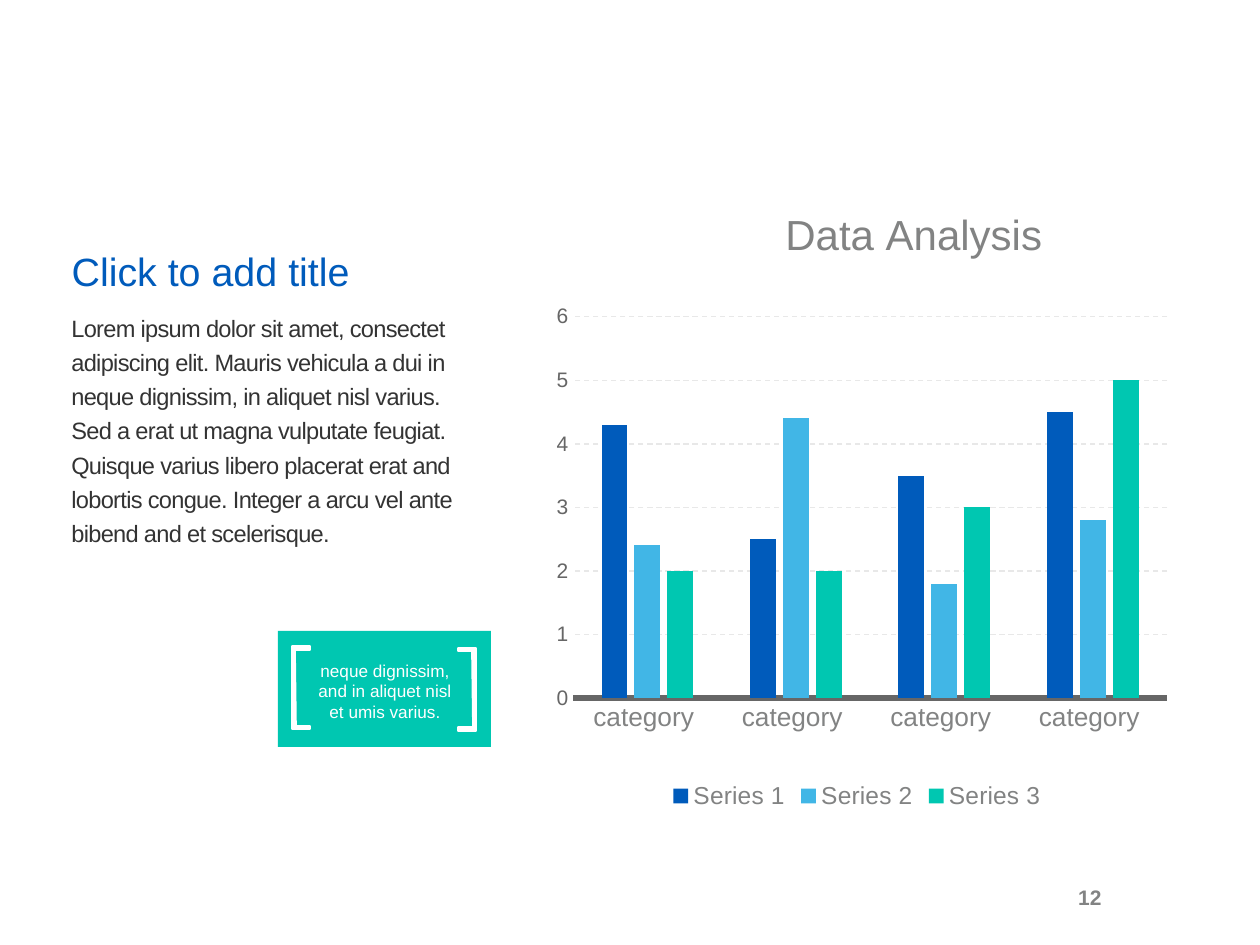
from lxml import etree
from pptx import Presentation
from pptx.chart.data import CategoryChartData
from pptx.dml.color import RGBColor
from pptx.enum.chart import XL_CHART_TYPE, XL_LEGEND_POSITION, XL_TICK_MARK
from pptx.enum.dml import MSO_LINE
from pptx.enum.shapes import MSO_SHAPE
from pptx.enum.text import MSO_ANCHOR, PP_ALIGN
from pptx.oxml.ns import qn
from pptx.util import Emu, Pt

PX = 914400 // 126
FONT = "Arial"
BLUE, SKY, TEAL = "005BBB", "41B6E6", "00C7B1"
GREY, DARK_GREY, PALE_GREY = "828383", "666666", "E8E8E8"
INK, WHITE = "333333", "FFFFFF"
COLUMNS = XL_CHART_TYPE.COLUMN_CLUSTERED
LEGEND_BOTTOM = XL_LEGEND_POSITION.BOTTOM
NO_TICK = XL_TICK_MARK.NONE
DASH = MSO_LINE.DASH
RECTANGLE = MSO_SHAPE.RECTANGLE
LEFT, CENTER, RIGHT = PP_ALIGN.LEFT, PP_ALIGN.CENTER, PP_ALIGN.RIGHT
TOP, MIDDLE, BOTTOM = MSO_ANCHOR.TOP, MSO_ANCHOR.MIDDLE, MSO_ANCHOR.BOTTOM

BODY = (
    "Lorem ipsum dolor sit amet, consectet adipiscing elit. Mauris vehicula "
    "a dui in neque dignissim, in aliquet nisl varius. Sed a erat ut magna "
    "vulputate feugiat. Quisque varius libero placerat erat and lobortis "
    "congue. Integer a arcu vel ante bibend and et scelerisque."
)
CATEGORIES = ["category "] * 4
SERIES = [
    ("Series 1", (4.3, 2.5, 3.5, 4.5), BLUE),
    ("Series 2", (2.4, 4.4, 1.8, 2.8), SKY),
    ("Series 3", (2, 2, 3, 5), TEAL),
]
LEFT_BRACKET = [(310, 646), (292, 646), (292, 729), (310, 729),
                (310, 726), (296, 726), (295, 650), (310, 650)]
# Half turn about the centre of the callout
RIGHT_BRACKET = [(768 - x, 1377 - y) for x, y in LEFT_BRACKET]


def rgb(color):
    return RGBColor.from_string(color)


def box(*lengths):
    return [Emu(length * PX) for length in lengths]


def style_font(font, size, color, bold=False):
    font.name = FONT
    font.size = Pt(size)
    font.bold = bold
    font.color.rgb = rgb(color)


def write(shape, text, size, color, align=LEFT, anchor=TOP, bold=False):
    """Fill a shape with one paragraph and return that paragraph."""
    frame = shape.text_frame
    frame.word_wrap = True
    frame.vertical_anchor = anchor
    frame.text = text
    paragraph = frame.paragraphs[0]
    paragraph.alignment = align
    for run in paragraph.runs:
        style_font(run.font, size, color, bold)
    return paragraph


def add_title(slide):
    title = slide.shapes.title
    title.left, title.top, title.width, title.height = box(59, 181, 469, 120)
    paragraph = write(title, "Click to add title", 22.5, BLUE, anchor=BOTTOM)
    paragraph.line_spacing = 0.9


def add_body(slide):
    body = slide.shapes.add_textbox(*box(59, 302, 413, 382))
    paragraph = write(body, BODY, 13.5, INK)
    paragraph.line_spacing = Pt(19.5)
    for run in paragraph.runs:
        run.font._element.set("spc", "-38")


def add_bracket(slide, points):
    builder = slide.shapes.build_freeform(*points[0], scale=PX)
    builder.add_line_segments(points[1:], close=True)
    bracket = builder.convert_to_shape()
    bracket.shadow.inherit = False
    bracket.fill.solid()
    bracket.fill.fore_color.rgb = rgb(WHITE)
    bracket.line.color.rgb = rgb(WHITE)
    bracket.line.width = Pt(1)


def add_callout(slide):
    panel = slide.shapes.add_shape(RECTANGLE, *box(278, 631, 213, 116))
    panel.shadow.inherit = False
    panel.fill.solid()
    panel.fill.fore_color.rgb = rgb(TEAL)
    panel.line.fill.background()
    for points in (LEFT_BRACKET, RIGHT_BRACKET):
        add_bracket(slide, points)
    quote = slide.shapes.add_textbox(*box(304, 654, 162, 74))
    write(quote, "neque dignissim, and in aliquet nisl et umis varius.",
          9.8, WHITE, CENTER)


def set_layout(element, position, **settings):
    """Place a chart part by fractions of the chart's size."""
    layout = element.find(qn("c:layout"))
    if layout is None:
        layout = etree.Element(qn("c:layout"))
        element.insert(position, layout)
    for child in list(layout):
        layout.remove(child)
    manual = etree.SubElement(layout, qn("c:manualLayout"))
    for name, value in settings.items():
        etree.SubElement(manual, qn(f"c:{name}")).set("val", str(value))


def style_axes(chart):
    categories, values = chart.category_axis, chart.value_axis
    for axis, size, color in ((categories, 15, GREY), (values, 12, DARK_GREY)):
        axis.major_tick_mark = axis.minor_tick_mark = NO_TICK
        style_font(axis.tick_labels.font, size, color)
    categories.format.line.color.rgb = rgb(DARK_GREY)
    categories.format.line.width = Pt(3.25)
    values.minimum_scale, values.maximum_scale, values.major_unit = 0, 6, 1
    values.format.line.fill.background()
    grid = values.major_gridlines.format.line
    grid.color.rgb = rgb(PALE_GREY)
    grid.width = Pt(0.75)
    grid.dash_style = DASH


def add_column_chart(slide):
    data = CategoryChartData()
    data.categories = CATEGORIES
    for name, values, _ in SERIES:
        data.add_series(name, values)
    chart = slide.shapes.add_chart(COLUMNS, *box(527, 200, 660, 615), data).chart
    style_font(chart.font, 10, DARK_GREY)

    chart.has_title = True
    heading = chart.chart_title
    heading.include_in_layout = False
    heading.text_frame.text = "Data Analysis"
    style_font(heading.text_frame.paragraphs[0].runs[0].font, 24, GREY)
    set_layout(heading._element, 1, xMode="edge", yMode="edge", x=0.38, y=-0.01)

    plot = chart.plots[0]
    plot.gap_width, plot.overlap = 219, -27
    plot.vary_by_categories = False
    for series, (_, _, color) in zip(plot.series, SERIES):
        series.format.fill.solid()
        series.format.fill.fore_color.rgb = rgb(color)
    set_layout(plot._element.getparent(), 0, layoutTarget="inner",
               xMode="edge", yMode="edge", x=0.07, y=0.19, w=0.9, h=0.62)
    style_axes(chart)

    chart.has_legend = True
    chart.legend.position = LEGEND_BOTTOM
    chart.legend.include_in_layout = False
    style_font(chart.legend.font, 14, GREY)


def add_page_number(slide):
    number = slide.shapes.add_textbox(*box(1040, 861, 74, 73))
    write(number, "12", 12, GREY, RIGHT, MIDDLE, bold=True)


def main():
    deck = Presentation()
    deck.slide_width, deck.slide_height = box(1260, 945)
    slide = deck.slides.add_slide(deck.slide_layouts[5])
    add_page_number(slide)
    add_column_chart(slide)
    add_body(slide)
    add_title(slide)
    add_callout(slide)
    deck.save("out.pptx")


if __name__ == "__main__":
    main()
